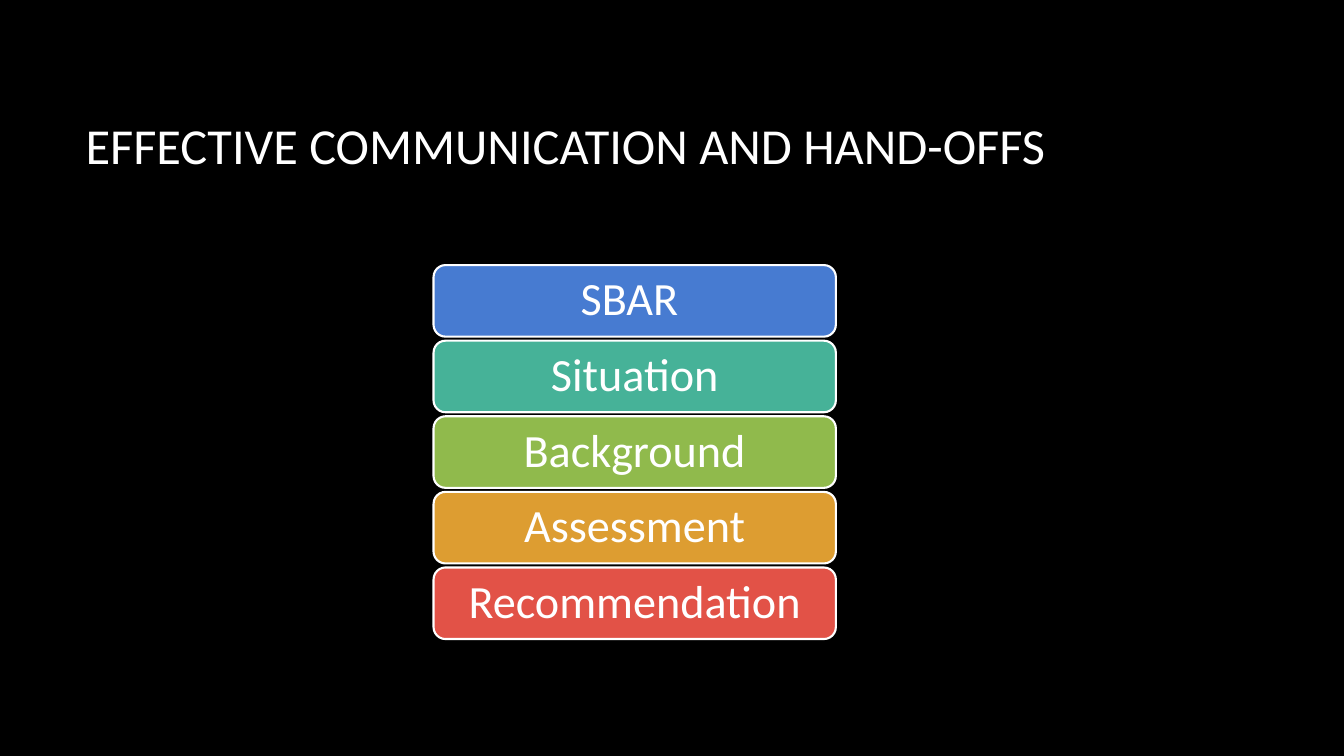
from dataclasses import dataclass

from pptx import Presentation
from pptx.dml.color import RGBColor
from pptx.enum import shapes, text
from pptx.slide import Slide
from pptx.text.text import TextFrame
from pptx.util import Inches, Pt

COLORS = {
    "background": "000000",
    "white": "FFFFFF",
    "blue": "477BD1",
    "teal": "46B298",
    "green": "90BA4C",
    "amber": "DD9D31",
    "red": "E25247",
}
FONT = "Calibri"

# Stack of steps, in inches
STACK_LEFT, STACK_TOP = 4.3, 2.63
STEP_WIDTH, STEP_HEIGHT, STEP_PITCH = 3.99, 0.71, 0.75


@dataclass(frozen=True)
class Step:
    label: str
    color: str


STEPS = [
    Step("SBAR ", "blue"),
    Step("Situation", "teal"),
    Step("Background", "green"),
    Step("Assessment", "amber"),
    Step("Recommendation", "red"),
]


def rgb(name: str) -> RGBColor:
    return RGBColor.from_string(COLORS[name])


def write(frame: TextFrame, words: str, size: float, align: text.PP_ALIGN) -> None:
    frame.text = words
    frame.word_wrap = True
    frame.vertical_anchor = text.MSO_ANCHOR.MIDDLE
    line = frame.paragraphs[0]
    line.alignment = align
    line.line_spacing = 0.9
    for run in line.runs:
        run.font.name = FONT
        run.font.size = Pt(size)
        run.font.color.rgb = rgb("white")


def draw_step(slide: Slide, step: Step, row: int) -> None:
    bar = slide.shapes.add_shape(
        shapes.MSO_SHAPE.ROUNDED_RECTANGLE,
        Inches(STACK_LEFT), Inches(STACK_TOP + row * STEP_PITCH),
        Inches(STEP_WIDTH), Inches(STEP_HEIGHT),
    )
    bar.shadow.inherit = False
    bar.fill.solid()
    bar.fill.fore_color.rgb = rgb(step.color)
    bar.line.color.rgb = rgb("white")
    bar.line.width = Pt(1.5)
    write(bar.text_frame, step.label, 33, text.PP_ALIGN.CENTER)


def main() -> None:
    deck = Presentation()
    deck.slide_width, deck.slide_height = Inches(13.33), Inches(7.5)
    slide = deck.slides.add_slide(deck.slide_layouts[6])
    slide.background.fill.solid()
    slide.background.fill.fore_color.rgb = rgb("background")

    # Title
    title = slide.shapes.add_textbox(
        Inches(0.75), Inches(0.67), Inches(11.08), Inches(1.59))
    write(title.text_frame, "EFFECTIVE COMMUNICATION AND HAND-OFFS", 36,
          text.PP_ALIGN.LEFT)

    # Steps
    for row, step in enumerate(STEPS):
        draw_step(slide, step, row)

    deck.save("out.pptx")


if __name__ == "__main__":
    main()
